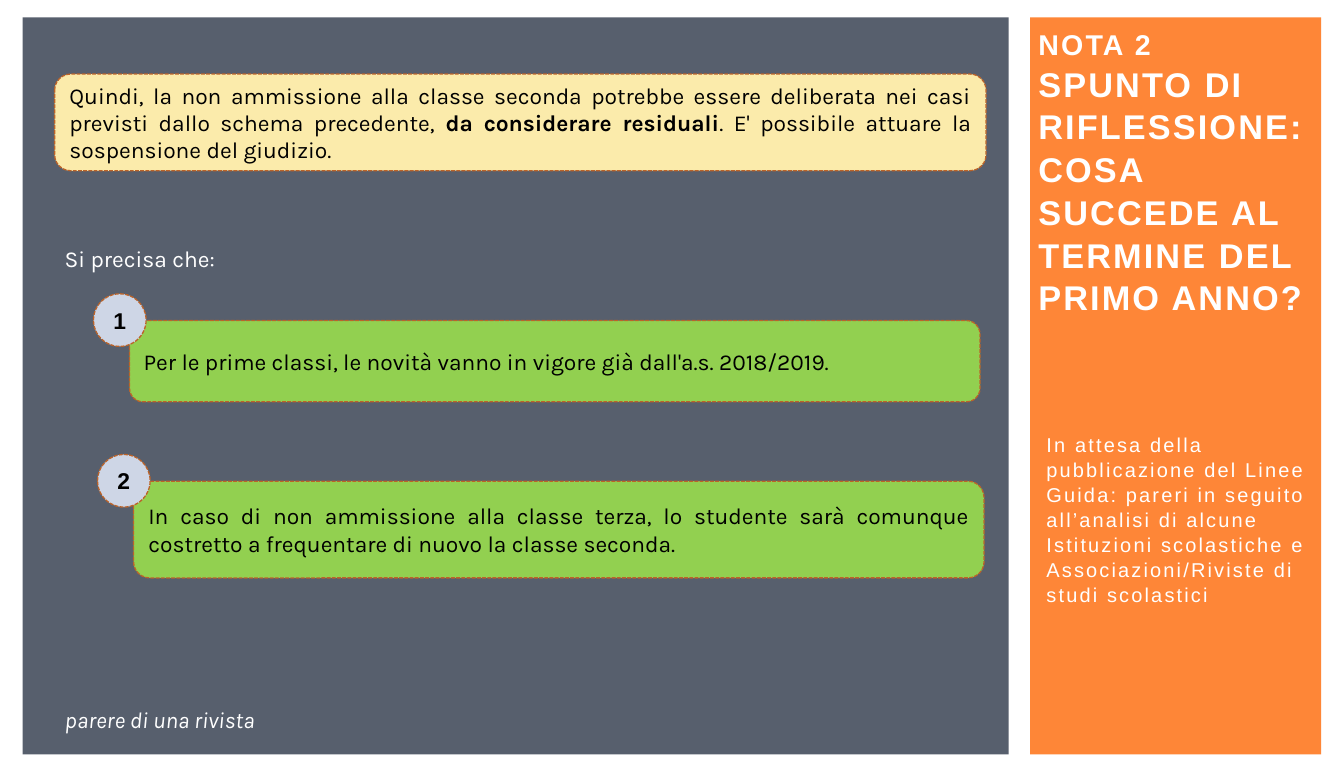
from dataclasses import dataclass

from pptx import Presentation
from pptx.dml.color import RGBColor
from pptx.enum.dml import MSO_LINE
from pptx.enum.shapes import MSO_SHAPE
from pptx.enum.text import MSO_ANCHOR, PP_ALIGN
from pptx.util import Cm, Pt

RECTANGLE = MSO_SHAPE.RECTANGLE
ROUNDED = MSO_SHAPE.ROUNDED_RECTANGLE
OVAL = MSO_SHAPE.OVAL
DASH = MSO_LINE.SQUARE_DOT
TOP, MIDDLE = MSO_ANCHOR.TOP, MSO_ANCHOR.MIDDLE
LEFT, CENTER, JUSTIFY = PP_ALIGN.LEFT, PP_ALIGN.CENTER, PP_ALIGN.JUSTIFY


@dataclass(frozen=True)
class Theme:
    """Colours, fonts and type sizes of the slide."""
    panel: str = "575F6D"
    sidebar: str = "FE8637"
    intro: str = "FBEBAB"
    card: str = "92D050"
    badge: str = "CED6E6"
    outline: str = "BC6329"
    light: str = "FFFFFF"
    dark: str = "000000"
    heading_font: str = "Arial"
    body_font: str = "Karla"
    title_size: int = 24
    label_size: int = 20
    body_size: int = 16
    note_size: int = 14
    tracking: int = 150
    line_spacing: float = 1.04


THEME = Theme()


def add_box(slide, kind, box, fill, outlined=False):
    """Add a filled preset shape, with a dashed outline if wanted."""
    shape = slide.shapes.add_shape(kind, *map(Cm, box))
    shape.shadow.inherit = False
    shape.fill.solid()
    shape.fill.fore_color.rgb = RGBColor.from_string(fill)
    if outlined:
        shape.line.color.rgb = RGBColor.from_string(THEME.outline)
        shape.line.width = Pt(0.9)
        shape.line.dash_style = DASH
    else:
        shape.line.fill.background()
    return shape


def add_text_box(slide, box):
    """Add an empty text box."""
    return slide.shapes.add_textbox(*map(Cm, box))


def style_run(run, size, font, color, bold=False, italic=False):
    """Set the typeface, size, colour and weight of a run."""
    run.font.size = Pt(size)
    run.font.name = font
    run.font.color.rgb = RGBColor.from_string(color)
    run.font.bold = bold
    run.font.italic = italic


def write(shape, text, color, font=THEME.body_font, size=THEME.body_size,
          align=LEFT, anchor=TOP, bold=False, italic=False):
    """Fill a shape with one paragraph and return that paragraph."""
    frame = shape.text_frame
    frame.word_wrap = True
    frame.vertical_anchor = anchor
    frame.text = text
    paragraph = frame.paragraphs[0]
    paragraph.alignment = align
    for run in paragraph.runs:
        style_run(run, size, font, color, bold, italic)
    return paragraph


def space_out(paragraph):
    """Widen the letter and line spacing of a sidebar paragraph."""
    paragraph.line_spacing = THEME.line_spacing
    for run in paragraph.runs:
        run.font._element.set("spc", str(THEME.tracking))


def add_intro(slide, box):
    """Add the opening statement with its bold phrase."""
    shape = add_box(slide, ROUNDED, box, THEME.intro, outlined=True)
    paragraph = write(
        shape,
        "Quindi, la non ammissione alla classe seconda potrebbe essere "
        "deliberata nei casi previsti dallo schema precedente, ",
        THEME.dark, align=JUSTIFY, anchor=MIDDLE)
    for text, bold in (
            ("da considerare residuali", True),
            (". E' possibile attuare la sospensione del giudizio.", False)):
        run = paragraph.add_run()
        run.text = text
        style_run(run, THEME.body_size, THEME.body_font, THEME.dark, bold)


def add_numbered_card(slide, box, number, text):
    """Add a card with a round number over its upper left corner."""
    left, top, _, _ = box
    card = add_box(slide, ROUNDED, box, THEME.card, outlined=True)
    write(card, text, THEME.dark, align=JUSTIFY, anchor=MIDDLE)
    badge = add_box(slide, OVAL, (left - 0.89, top - 0.66, 1.3, 1.3),
                    THEME.badge, outlined=True)
    write(badge, str(number), THEME.dark, THEME.heading_font,
          align=CENTER, anchor=MIDDLE, bold=True)


def add_main_panel(slide, box):
    """Add the dark panel with the statement, the cards and the credit."""
    left, top, _, _ = box
    add_box(slide, RECTANGLE, box, THEME.panel)
    text_left = left + 0.79
    add_intro(slide, (text_left, top + 1.4, 23.01, 2.39))
    heading = add_text_box(slide, (text_left, top + 5.49, 5.79, 0.94))
    write(heading, "Si precisa che:", THEME.light)
    cards = (
        (2.64, 7.49, 2.01,
         "Per le prime classi, le novità vanno in vigore già dall'a.s. 2018/2019."),
        (2.74, 11.46, 2.39,
         "In caso di non ammissione alla classe terza, lo studente sarà "
         "comunque costretto a frequentare di nuovo la classe seconda."),
    )
    for number, (indent, drop, height, text) in enumerate(cards, 1):
        add_numbered_card(slide, (left + indent, top + drop, 21.01, height),
                          number, text)
    credit = add_text_box(slide, (text_left, top + 16.89, 5.79, 0.94))
    write(credit, "parere di una rivista", THEME.light, italic=True)


def add_sidebar(slide, box):
    """Add the orange sidebar with the title and the note."""
    left, top, width, _ = box
    add_box(slide, RECTANGLE, box, THEME.sidebar)
    title = add_text_box(slide, (left - 0.05, top + 0.31, 7.8, 7.01))
    paragraph = write(
        title,
        "NOTA 2\vSPUNTO DI RIFLESSIONE: COSA SUCCEDE AL TERMINE DEL PRIMO ANNO?",
        THEME.light, THEME.heading_font, THEME.title_size,
        anchor=MIDDLE, bold=True)
    paragraph.runs[0].font.size = Pt(THEME.label_size)
    space_out(paragraph)
    note = add_text_box(slide, (left + 0.15, top + 6.89, width, 11))
    paragraph = write(
        note,
        "In attesa della pubblicazione del Linee Guida: pareri in seguito "
        "all’analisi di alcune Istituzioni scolastiche e "
        "Associazioni/Riviste di studi scolastici",
        THEME.light, THEME.heading_font, THEME.note_size, anchor=MIDDLE)
    paragraph.space_before = Pt(2.8)
    space_out(paragraph)


def main():
    """Build the slide and save it."""
    presentation = Presentation()
    presentation.slide_width = Cm(33.2)
    presentation.slide_height = Cm(19.05)
    slide = presentation.slides.add_slide(presentation.slide_layouts[6])
    add_main_panel(slide, (0.56, 0.43, 24.36, 18.21))
    add_sidebar(slide, (25.45, 0.43, 7.19, 18.21))
    presentation.save("out.pptx")


if __name__ == "__main__":
    main()
